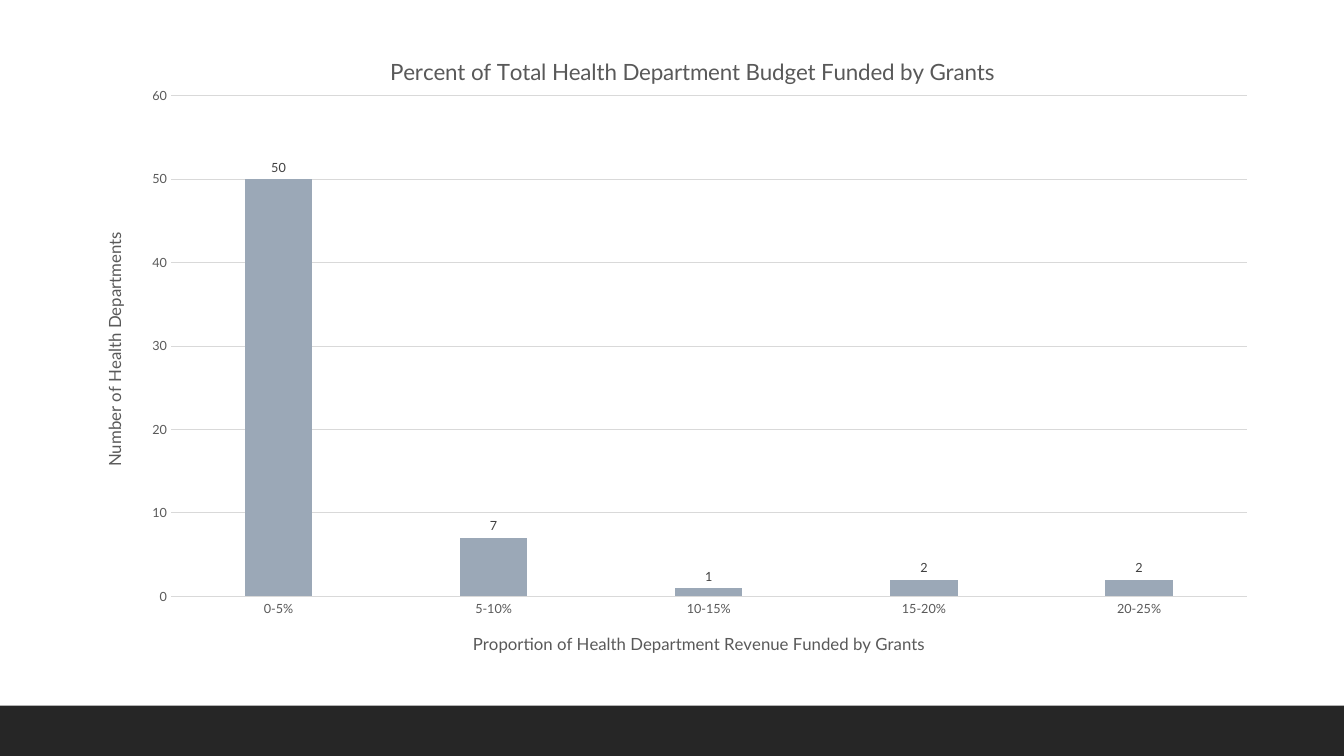
from lxml.etree import SubElement
from pptx import Presentation
from pptx.chart.data import CategoryChartData
from pptx.dml.color import RGBColor
from pptx.enum.chart import XL_CHART_TYPE, XL_LABEL_POSITION, XL_TICK_MARK
from pptx.enum.shapes import MSO_SHAPE
from pptx.oxml.ns import qn
from pptx.util import Inches, Pt

COLORS = {"footer": "262626", "bar": "9BA8B7", "text": "595959",
          "label": "404040", "rule": "D9D9D9", "background": "FFFFFF"}
FONT = "Lato"
SLIDE_WIDTH, SLIDE_HEIGHT = Inches(13.33), Inches(7.5)
DEPARTMENTS_BY_SHARE = {"0-5%": 50, "5-10%": 7, "10-15%": 1, "15-20%": 2, "20-25%": 2}


def color(name):
    return RGBColor.from_string(COLORS[name])


def set_font(font, size, color_name):
    font.name = FONT
    font.size = Pt(size)
    font.bold = False
    font.color.rgb = color(color_name)


def set_rule(line):
    line.color.rgb = color("rule")
    line.width = Pt(0.75)


def set_layout(element, after, **settings):
    """Place a chart part by shares of the chart's size."""
    for layout in element.findall(qn("c:layout")):
        element.remove(layout)
    layout = SubElement(element, qn("c:layout"))
    manual = SubElement(layout, qn("c:manualLayout"))
    for name, value in settings.items():
        SubElement(manual, qn(f"c:{name}")).set("val", str(value))
    if after is None:
        element.insert(0, layout)
    else:
        after.addnext(layout)


def set_title(title, text, size, x, y):
    paragraph = title.text_frame.paragraphs[0]
    paragraph.text = text
    set_font(paragraph.font, size, "text")
    element = title._element
    set_layout(element, element.find(qn("c:tx")), xMode="edge", yMode="edge", x=x, y=y)


def add_footer(slide, left, top, width, height):
    footer = slide.shapes.add_shape(MSO_SHAPE.RECTANGLE, left, top, width, height)
    footer.shadow.inherit = False
    footer.fill.solid()
    footer.fill.fore_color.rgb = color("footer")
    footer.line.fill.background()


def add_grant_chart(slide, left, top, width, height):
    data = CategoryChartData()
    data.categories = list(DEPARTMENTS_BY_SHARE)
    data.add_series("Series 1", list(DEPARTMENTS_BY_SHARE.values()))
    chart = slide.shapes.add_chart(
        XL_CHART_TYPE.COLUMN_CLUSTERED, left, top, width, height, data).chart
    set_font(chart.font, 10, "text")
    chart.has_legend = False

    # Axes
    category_axis, value_axis = chart.category_axis, chart.value_axis
    for axis in (category_axis, value_axis):
        axis.major_tick_mark = axis.minor_tick_mark = XL_TICK_MARK.NONE
        set_font(axis.tick_labels.font, 9, "text")
    set_rule(category_axis.format.line)
    value_axis.format.line.fill.background()
    set_rule(value_axis.major_gridlines.format.line)
    value_axis.minimum_scale, value_axis.maximum_scale = 0, 60
    value_axis.major_unit = 10

    # Titles
    set_title(chart.chart_title,
              "Percent of Total Health Department Budget Funded by Grants", 16, 0.28, 0.03)
    set_title(category_axis.axis_title,
              "Proportion of Health Department Revenue Funded by Grants", 12, 0.35, 0.94)
    set_title(value_axis.axis_title, "Number of Health Departments", 12, 0.04, 0.31)

    # Bars and labels
    plot = chart.plots[0]
    plot.gap_width, plot.overlap = 219, -27
    plot.vary_by_categories = False
    series = plot.series[0]
    series.format.fill.solid()
    series.format.fill.fore_color.rgb = color("bar")
    labels = series.data_labels
    labels.show_value = True
    labels.position = XL_LABEL_POSITION.OUTSIDE_END
    set_font(labels.font, 9, "label")

    # Plot area
    plot_area = chart._chartSpace.find(f".//{qn('c:plotArea')}")
    set_layout(plot_area, None, layoutTarget="inner", xMode="edge", yMode="edge",
               x=0.1, y=0.1, w=0.9, h=0.79)


def main():
    presentation = Presentation()
    presentation.slide_width, presentation.slide_height = SLIDE_WIDTH, SLIDE_HEIGHT
    slide = presentation.slides.add_slide(presentation.slide_layouts[6])
    slide.background.fill.solid()
    slide.background.fill.fore_color.rgb = color("background")
    footer_height = Inches(0.5)
    add_footer(slide, 0, SLIDE_HEIGHT - footer_height, SLIDE_WIDTH, footer_height)
    add_grant_chart(slide, Inches(0.51), Inches(0.32), Inches(11.86), Inches(6.29))
    presentation.save("out.pptx")


if __name__ == "__main__":
    main()
